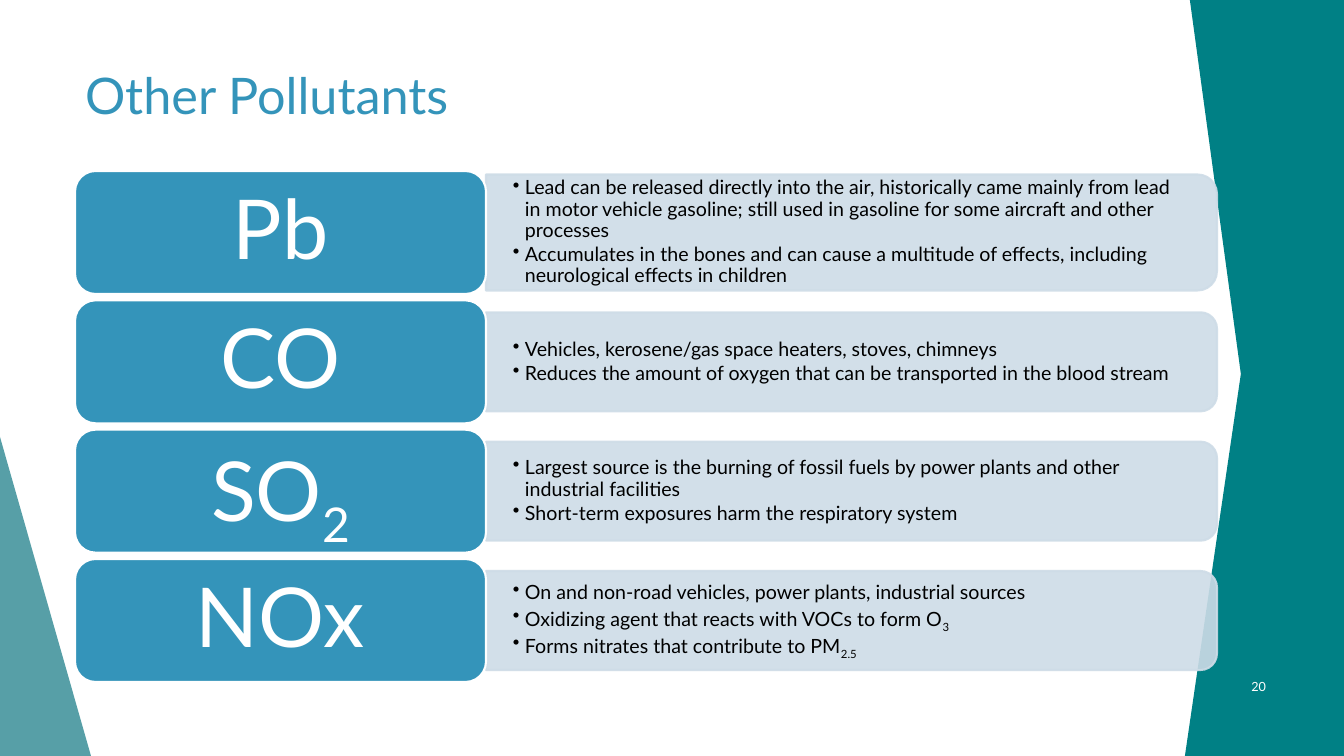
from pptx import Presentation
from pptx.dml.color import RGBColor
from pptx.enum.shapes import MSO_SHAPE as Shape
from pptx.enum.text import MSO_ANCHOR as Anchor, MSO_AUTO_SIZE as AutoSize, PP_ALIGN as Align
from pptx.oxml.ns import qn
from pptx.util import Pt
from lxml.etree import SubElement

WHITE = RGBColor(0xFF, 0xFF, 0xFF)
BLACK = RGBColor(0x00, 0x00, 0x00)
BLUE = RGBColor(0x34, 0x94, 0xBA)
PALE = RGBColor(0xCE, 0xDC, 0xE7)
TEAL = RGBColor(0x00, 0x80, 0x85)
SAGE = RGBColor(0x3A, 0x8F, 0x98)

WIDTH, HEIGHT = 1344, 756
LABEL_LEFT, LABEL_WIDTH, LABEL_HEIGHT = 75, 411, 123
PANEL_LEFT, PANEL_WIDTH = 486, 731
FIRST_TOP, LAST_TOP = 171, 559

POLLUTANTS = [
    ("Pb", 116, [
        "Lead can be released directly into the air, historically came mainly from lead in motor "
        "vehicle gasoline; still used in gasoline for some aircraft and other processes",
        "Accumulates in the bones and can cause a multitude of effects, including neurological "
        "effects in children"]),
    ("CO", 99, [
        "Vehicles, kerosene/gas space heaters, stoves, chimneys",
        "Reduces the amount of oxygen that can be transported in the blood stream"]),
    ("SO|2", 99, [
        "Largest source is the burning of fossil fuels by power plants and other industrial facilities",
        "Short-term exposures harm the respiratory system"]),
    ("NOx", 99, [
        "On and non-road vehicles, power plants, industrial sources",
        "Oxidizing agent that reacts with VOCs to form O|3",
        "Forms nitrates that contribute to PM|2.5"]),
]


def px(length):
    return round(length * 12192000 / WIDTH)


class SlideBuilder:
    font = "Lato"

    def __init__(self, deck):
        self.page = deck.slides.add_slide(deck.slide_layouts[5])

    def paint(self, shape, color, opacity=100, line=None):
        shape.shadow.inherit = False
        shape.fill.solid()
        shape.fill.fore_color.rgb = color
        if line is None:
            shape.line.fill.background()
        else:
            shape.line.color.rgb = line
            shape.line.width = Pt(1.5)
        if opacity < 100:
            for tone in shape._element.spPr.iter(qn("a:srgbClr")):
                SubElement(tone, qn("a:alpha")).set("val", str(opacity * 1000))

    def preset(self, kind, left, top, width, height, color, **style):
        shape = self.page.shapes.add_shape(kind, px(left), px(top), px(width), px(height))
        self.paint(shape, color, **style)
        return shape

    def outline(self, points, color):
        builder = self.page.shapes.build_freeform(*points[0], scale=px(1))
        builder.add_line_segments(points[1:], close=True)
        self.paint(builder.convert_to_shape(), color)

    def frame(self, shape, side, upright, anchor):
        frame = shape.text_frame
        frame.word_wrap = True
        frame.auto_size = AutoSize.NONE
        frame.vertical_anchor = anchor
        frame.margin_left = frame.margin_right = px(side)
        frame.margin_top = frame.margin_bottom = px(upright)
        return frame

    def add_text(self, para, text, size, color, align=Align.LEFT, spacing=1.0):
        para.alignment = align
        para.line_spacing = spacing
        for index, part in enumerate(text.split("|")):
            span = para.add_run()
            span.text = part
            span.font.name = self.font
            span.font.size = Pt(size)
            span.font.color.rgb = color
            if index % 2:
                span._r.get_or_add_rPr().set("baseline", "-25000")

    def title(self, text):
        box = self.page.shapes.title
        box.left, box.top, box.width, box.height = px(75), px(59), px(1202), px(145)
        frame = self.frame(box, 10, 5, Anchor.TOP)
        self.add_text(frame.paragraphs[0], text, 36, BLUE)

    def panel(self, middle, height):
        center = PANEL_LEFT + PANEL_WIDTH / 2
        shape = self.preset(Shape.ROUND_2_SAME_RECTANGLE, center - height / 2,
                            middle - PANEL_WIDTH / 2, height, PANEL_WIDTH,
                            PALE, opacity=90, line=PALE)
        shape.rotation = 90

    def text_box(self, left, top, width, height, side, upright):
        box = self.page.shapes.add_textbox(px(left), px(top), px(width), px(height))
        return self.frame(box, side, upright, Anchor.MIDDLE)

    def bullets(self, middle, height, items):
        frame = self.text_box(PANEL_LEFT, middle - height / 2, PANEL_WIDTH - 6, height, 27, 14)
        for index, item in enumerate(items):
            para = frame.add_paragraph() if index else frame.paragraphs[0]
            props = para._p.get_or_add_pPr()
            props.set("marL", str(px(12)))
            props.set("indent", str(-px(12)))
            SubElement(props, qn("a:buChar")).set("char", "•")
            para.space_after = Pt(2.1)
            self.add_text(para, item, 14, BLACK, spacing=0.9)

    def label(self, top, text):
        shape = self.preset(Shape.ROUNDED_RECTANGLE, LABEL_LEFT, top, LABEL_WIDTH,
                            LABEL_HEIGHT, BLUE, line=WHITE)
        frame = self.frame(shape, 25, 12, Anchor.MIDDLE)
        para = frame.paragraphs[0]
        para.space_after = Pt(20.65)
        self.add_text(para, text, 59, WHITE, Align.CENTER, 0.9)

    def page_number(self, text):
        frame = self.text_box(1201, 667, 75, 40, 10, 5)
        self.add_text(frame.paragraphs[0], text, 9, WHITE, Align.RIGHT)


def main():
    deck = Presentation()
    deck.slide_width, deck.slide_height = px(WIDTH), px(HEIGHT)
    slide = SlideBuilder(deck)
    slide.preset(Shape.RIGHT_TRIANGLE, 0, 437, 91, 319, SAGE, opacity=85)
    slide.outline([(WIDTH, 0), (WIDTH, HEIGHT), (1185, HEIGHT), (1241, 374), (1190, 0)], TEAL)
    slide.title("Other Pollutants")
    for row, (name, height, items) in enumerate(POLLUTANTS):
        top = FIRST_TOP + (LAST_TOP - FIRST_TOP) * row / (len(POLLUTANTS) - 1)
        middle = top + LABEL_HEIGHT / 2
        slide.panel(middle, height)
        slide.bullets(middle, height - 11, items)
        slide.label(top, name)
    slide.page_number("20")
    deck.save("out.pptx")


if __name__ == "__main__":
    main()
